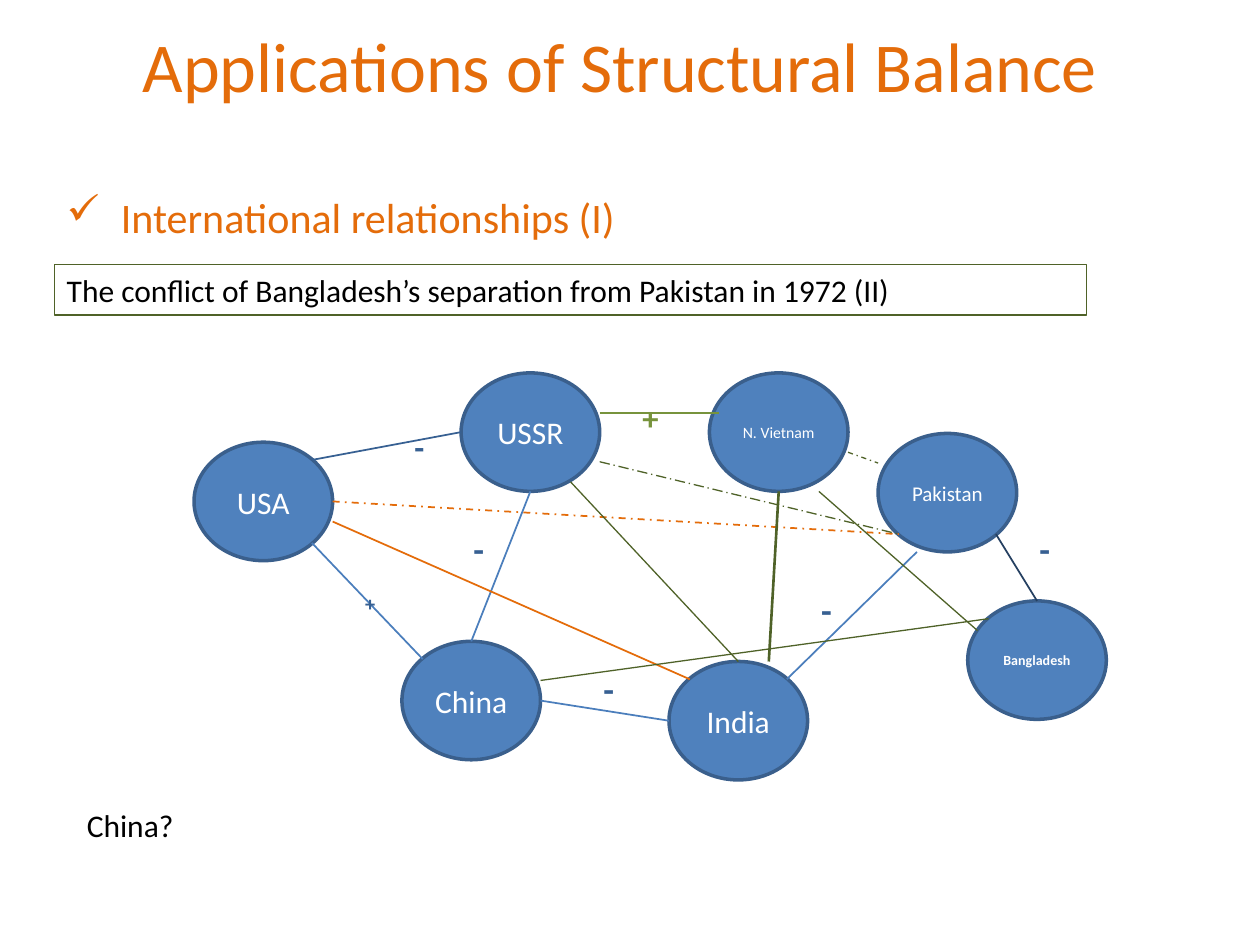
from lxml import etree
from pptx import Presentation
from pptx.dml.color import RGBColor
from pptx.enum import dml, shapes, text
from pptx.oxml.ns import qn
from pptx.util import Pt

ORANGE = RGBColor(0xE4, 0x6C, 0x0A)
BLACK = RGBColor(0, 0, 0)
WHITE = RGBColor(0xFF, 0xFF, 0xFF)
NODE_BLUE = RGBColor(0x4F, 0x81, 0xBD)
NODE_EDGE = RGBColor(0x3A, 0x5F, 0x8C)
BLUE = RGBColor(0x4B, 0x7E, 0xBC)
DARK_BLUE = RGBColor(0x37, 0x60, 0x92)
NAVY = RGBColor(0x25, 0x40, 0x61)
GREEN = RGBColor(0x77, 0x93, 0x3C)
DARK_GREEN = RGBColor(0x4F, 0x62, 0x28)

DASH_DOT = dml.MSO_LINE.DASH_DOT
LONG_DASH_DOT = dml.MSO_LINE.LONG_DASH_DOT


def write(shape, words, size=18, color=BLACK, bold=False, align=text.PP_ALIGN.LEFT,
          anchor=text.MSO_ANCHOR.TOP, baseline=0):
    """Fill a shape with one formatted paragraph; baseline is a percentage."""
    frame = shape.text_frame
    frame.word_wrap = True
    frame.vertical_anchor = anchor
    paragraph = frame.paragraphs[0]
    paragraph.alignment = align
    run = paragraph.add_run()
    run.text = words
    run.font.name = "Calibri"
    run.font.size = Pt(size)
    run.font.bold = bold
    run.font.color.rgb = color
    if baseline:
        run._r.get_or_add_rPr().set("baseline", str(baseline * 1000))
    return paragraph


prs = Presentation()
prs.slide_width, prs.slide_height = Pt(720), Pt(540)
slide = prs.slides.add_slide(prs.slide_layouts[5])

title = slide.shapes.title
title.left, title.top, title.width, title.height = Pt(42.5), Pt(9.4), Pt(623.5), Pt(55.4)
write(title, "Applications of Structural Balance", size=40, color=ORANGE,
      align=text.PP_ALIGN.CENTER)

topic = slide.shapes.add_textbox(Pt(31), Pt(105.8), Pt(487.5), Pt(36))
topic_line = write(topic, "International relationships (I)", size=24, color=ORANGE)
topic_format = topic_line._p.get_or_add_pPr()
topic_format.set("marL", str(Pt(31)))
topic_format.set("indent", str(Pt(-31)))
etree.SubElement(topic_format, qn("a:buChar")).set("char", "✓")

conflict = slide.shapes.add_shape(shapes.MSO_SHAPE.RECTANGLE,
                                  Pt(31), Pt(151.2), Pt(589.7), Pt(28.8))
conflict.shadow.inherit = False
conflict.fill.background()
conflict.line.color.rgb = DARK_GREEN
conflict.line.width = Pt(0.75)
write(conflict, "The conflict of Bangladesh’s separation from Pakistan in 1972 (II)")

# Countries: left, top, text size, bold
NODE_W, NODE_H = 79.2, 67.7
countries = {
    "USA": (110.9, 252.7, 18, False),
    "USSR": (263.5, 213.1, 18, False),
    "China": (229.7, 366.5, 18, False),
    "India": (382.3, 378, 18, False),
    "Pakistan": (501.8, 247.7, 12, False),
    "Bangladesh": (553, 343.4, 8, True),
    "N. Vietnam": (405.4, 213.1, 9, False),
}
for country, (left, top, size, bold) in countries.items():
    node = slide.shapes.add_shape(shapes.MSO_SHAPE.OVAL,
                                  Pt(left), Pt(top), Pt(NODE_W), Pt(NODE_H))
    node.shadow.inherit = False
    node.fill.solid()
    node.fill.fore_color.rgb = NODE_BLUE
    node.line.color.rgb = NODE_EDGE
    node.line.width = Pt(2)
    write(node, country, size=size, color=WHITE, bold=bold,
          align=text.PP_ALIGN.CENTER, anchor=text.MSO_ANCHOR.MIDDLE)

# Each end is a country and a point given as fractions of its width and height
TOP, BOTTOM, LEFT, RIGHT = (0.5, 0), (0.5, 1), (0, 0.5), (1, 0.5)
TOP_LEFT, TOP_RIGHT = (0.15, 0.15), (0.85, 0.15)
BOTTOM_LEFT, BOTTOM_RIGHT = (0.15, 0.85), (0.85, 0.85)
relations = [
    ("USSR", BOTTOM, "China", TOP, BLUE, 1, None),
    ("China", RIGHT, "India", LEFT, BLUE, 1, None),
    ("USA", BOTTOM_RIGHT, "China", TOP_LEFT, BLUE, 1, None),
    ("Pakistan", (0.28, 1), "India", TOP_RIGHT, BLUE, 1, None),
    ("USA", (1, 0.67), "India", TOP_LEFT, ORANGE, 1, None),
    ("USA", RIGHT, "Pakistan", BOTTOM_LEFT, ORANGE, 1, DASH_DOT),
    ("USA", TOP_RIGHT, "USSR", LEFT, DARK_BLUE, 1, None),
    ("USSR", (1, 0.34), "N. Vietnam", (0.07, 0.34), GREEN, 1, None),
    ("Pakistan", BOTTOM_RIGHT, "Bangladesh", TOP, NAVY, 1, None),
    ("USSR", (0.79, 0.92), "India", TOP, DARK_GREEN, 0.75, None),
    ("N. Vietnam", BOTTOM, "India", (0.72, 0), DARK_GREEN, 1.5, None),
    ("N. Vietnam", (1, 0.67), "Pakistan", (0, 0.25), DARK_GREEN, 0.75, DASH_DOT),
    ("N. Vietnam", (0.79, 1), "Bangladesh", (0.07, 0.25), DARK_GREEN, 0.75, None),
    ("USSR", (1, 0.75), "Pakistan", BOTTOM_LEFT, DARK_GREEN, 0.75, LONG_DASH_DOT),
    ("China", (1, 0.33), "Bangladesh", TOP_LEFT, DARK_GREEN, 0.75, None),
]
for start, start_at, end, end_at, color, width, dash in relations:
    ends = []
    for country, (across, down) in ((start, start_at), (end, end_at)):
        left, top = countries[country][:2]
        ends += [Pt(left + across * NODE_W), Pt(top + down * NODE_H)]
    relation = slide.shapes.add_connector(shapes.MSO_CONNECTOR.STRAIGHT, *ends)
    relation.line.color.rgb = color
    relation.line.width = Pt(width)
    if dash is not None:
        relation.line.dash_style = dash
    etree.SubElement(relation._element.spPr, qn("a:effectLst"))

# Signs: text, left, top, height, size, colour, baseline
signs = [
    ("-", 263.5, 298.1, 31.7, 20, DARK_BLUE, 0),
    ("-", 337.7, 378, 31.7, 20, DARK_BLUE, 0),
    ("+", 201.6, 321.1, 23.8, 20, DARK_BLUE, -25),
    ("-", 462.2, 332.6, 31.7, 20, DARK_BLUE, 0),
    ("-", 229.7, 218.9, 33.1, 32, DARK_BLUE, -25),
    ("+", 360, 202.3, 33.1, 32, GREEN, -25),
    ("-", 586.8, 298.1, 31.7, 20, DARK_BLUE, 0),
]
for sign, left, top, height, size, color, baseline in signs:
    sign_box = slide.shapes.add_textbox(Pt(left), Pt(top), Pt(33.8), Pt(height))
    write(sign_box, sign, size=size, color=color, bold=True, baseline=baseline)

question = slide.shapes.add_textbox(Pt(42.5), Pt(457.2), Pt(306), Pt(28.8))
write(question, "China?")

prs.save("out.pptx")
